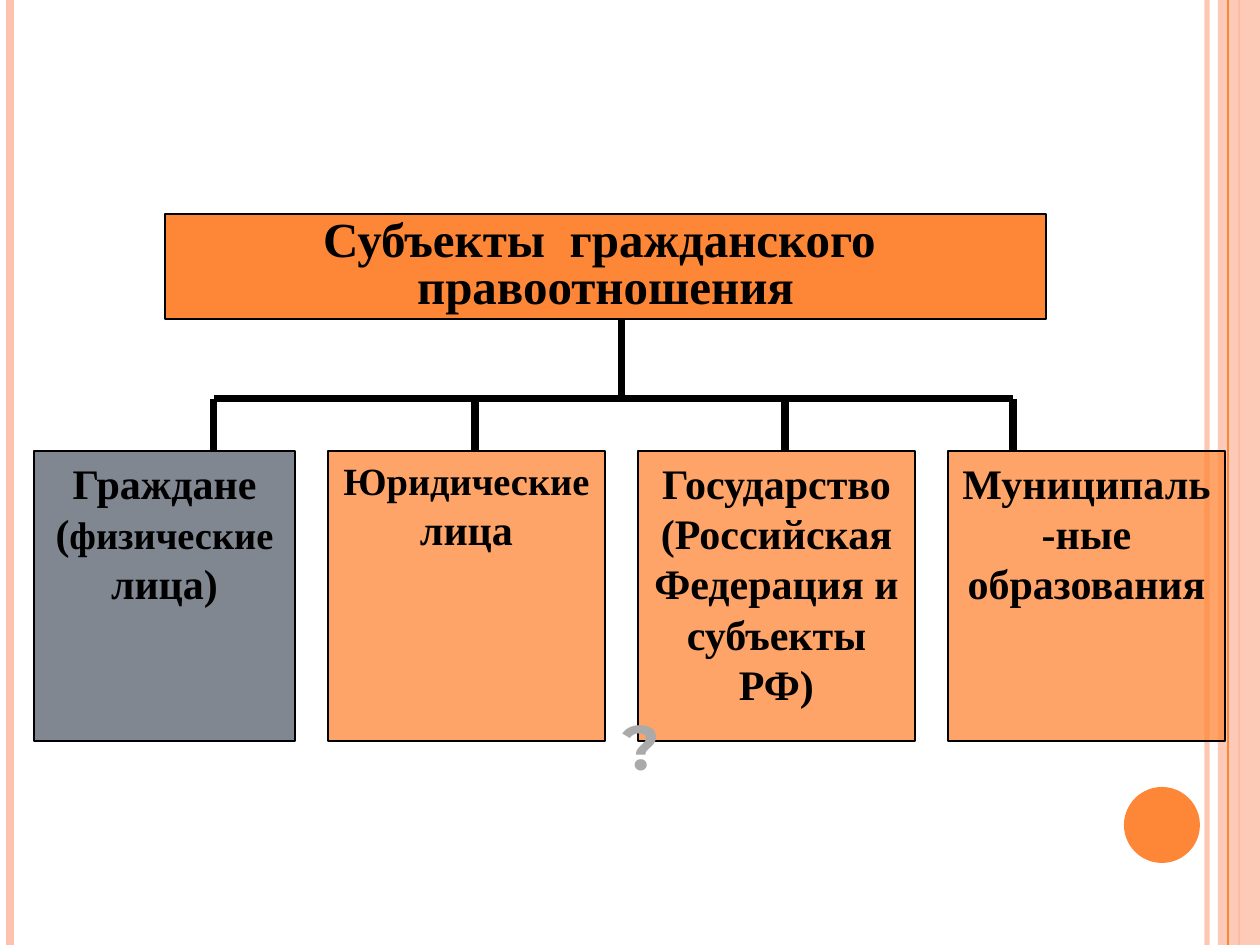
"""Build a slide with a tree of the subjects of a civil law relation."""
from lxml import etree
from pptx import Presentation
from pptx import util as u
from pptx.dml.color import RGBColor
from pptx.enum import shapes, text
from pptx.oxml.ns import qn

BLACK = RGBColor(0x00, 0x00, 0x00)
ORANGE = RGBColor(0xFE, 0x86, 0x37)
PEACH = RGBColor(0xFE, 0xC3, 0xAE)
SLATE = RGBColor(0x57, 0x5F, 0x6D)
GRAY = RGBColor(0xAA, 0xAA, 0xAA)
SERIF = "Times New Roman"
WIDE, HIGH = 1260, 945

TITLE = "Субъекты  гражданского  правоотношения"
CARDS = [
    (34, 261, SLATE, 214, 4, [("Граждане (", 24), ("физические", 22), (" лица)", 24)]),
    (328, 277, ORANGE, 475, 4.5, [("Юридические ", 22), ("лица", 24)]),
    (638, 277, ORANGE, 785, 4.5, [("Государство (Российская Федерация и субъекты РФ)", 24)]),
    (948, 277, ORANGE, 1013, 4.5, [("Муниципаль-ные образования", 24)]),
]
EDGES = [(1207, PEACH, 3, 93), (10, PEACH, 4.5, 100), (1239, ORANGE, 1.5, 100)]
BAR, TOP, TALL = 399, 451, 290
HEAD = (165, 214, 881, 105)


def px(num):
    return u.Emu(round(num * 914400 / 126))


def fade(props, alpha):
    color = props.find(".//" + qn("a:srgbClr"))
    etree.SubElement(color, qn("a:alpha")).set("val", str(alpha * 1000))


def rule(slide, x1, y1, x2, y2, color, width, alpha=100):
    line = slide.shapes.add_connector(
        shapes.MSO_CONNECTOR.STRAIGHT, px(x1), px(y1), px(x2), px(y2))
    line.line.color.rgb = color
    line.line.width = u.Pt(width)
    props = line._element.spPr
    etree.SubElement(props, qn("a:effectLst"))
    if alpha < 100:
        fade(props, alpha)


def paint(shape, color, alpha=100, edge=False):
    shape.fill.solid()
    shape.fill.fore_color.rgb = color
    if alpha < 100:
        fade(shape._element.spPr, alpha)
    if edge:
        shape.line.color.rgb = BLACK
        shape.line.width = u.Pt(0.75)
    else:
        shape.line.fill.background()


def block(slide, kind, area, color, alpha=100, edge=False):
    shape = slide.shapes.add_shape(kind, *map(px, area))
    shape.shadow.inherit = False
    paint(shape, color, alpha, edge)
    return shape


def style(para, name, color, size=None):
    para.alignment = text.PP_ALIGN.CENTER
    font = para.font
    font.name, font.bold = name, True
    font.color.rgb = color
    if size:
        font.size = u.Pt(size)


def frame(slide):
    for x, color, width, alpha in EDGES:
        rule(slide, x, 0, x, HIGH, color, width, alpha)
    block(slide, shapes.MSO_SHAPE.RECTANGLE, (1218, 0, 42, HIGH), PEACH, 87)
    rule(slide, 1228, 0, 1228, HIGH, ORANGE, 0.75)
    block(slide, shapes.MSO_SHAPE.OVAL, (1124, 787, 76, 76), ORANGE)


def head(slide):
    title = slide.shapes.title
    title.left, title.top, title.width, title.height = map(px, HEAD)
    paint(title, ORANGE, edge=True)
    body = title.text_frame
    body.text = TITLE
    body.word_wrap = True
    body.auto_size = text.MSO_AUTO_SIZE.NONE
    body.vertical_anchor = text.MSO_ANCHOR.MIDDLE
    para = body.paragraphs[0]
    para.line_spacing = 0.8
    style(para, SERIF, BLACK, 28)


def card(slide, left, width, color, runs):
    shape = block(slide, shapes.MSO_SHAPE.RECTANGLE,
                  (left, TOP, width, TALL), color, 75, True)
    body = shape.text_frame
    body.word_wrap = True
    body.vertical_anchor = text.MSO_ANCHOR.TOP
    para = body.paragraphs[0]
    same = len(runs) == 1
    style(para, SERIF, BLACK, runs[0][1] if same else None)
    for words, size in runs:
        run = para.add_run()
        run.text = words
        if not same:
            run.font.size = u.Pt(size)


def tree(slide):
    rule(slide, CARDS[0][3], BAR, CARDS[-1][3], BAR, BLACK, 4)
    rule(slide, 622, HEAD[1] + HEAD[3], 622, BAR, BLACK, 4)
    for left, width, color, drop, thick, runs in CARDS:
        rule(slide, drop, BAR, drop, TOP, BLACK, thick)
        card(slide, left, width, color, runs)


def mark(slide):
    box = slide.shapes.add_textbox(*map(px, (610, 701, 59, 69)))
    box.text_frame.word_wrap = False
    para = box.text_frame.paragraphs[0]
    para.text = "?"
    style(para, "Montserrat", GRAY, 36)


def main():
    deck = Presentation()
    deck.slide_width, deck.slide_height = px(WIDE), px(HIGH)
    slide = deck.slides.add_slide(deck.slide_layouts[5])
    for part in (frame, head, tree, mark):
        part(slide)
    deck.save("out.pptx")


if __name__ == "__main__":
    main()
